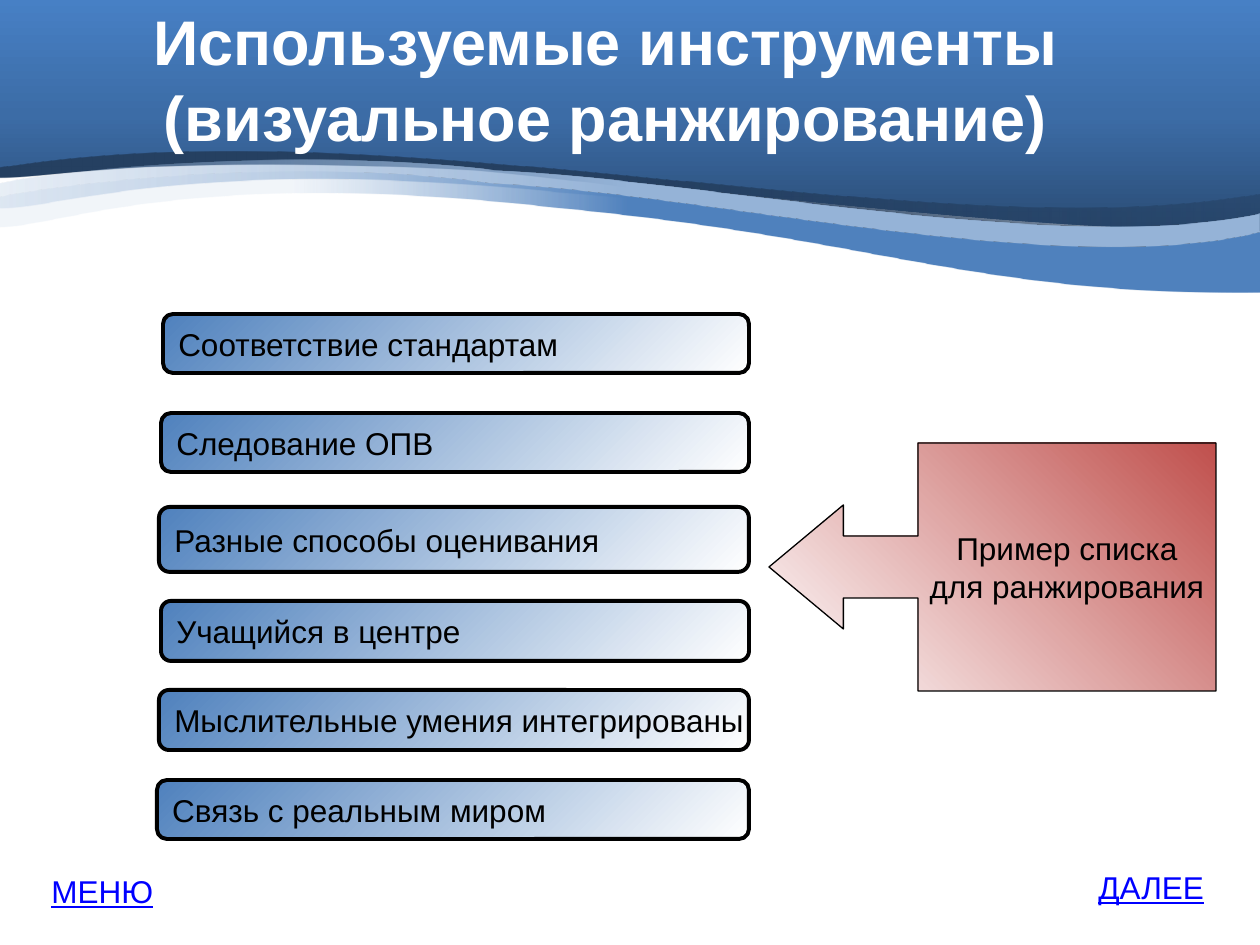
import dataclasses

import lxml.etree
import pptx
import pptx.dml.color
import pptx.enum.shapes
import pptx.enum.text
import pptx.oxml.ns
import pptx.util

SCALE = 914400 / 126
KINDS = pptx.enum.shapes.MSO_SHAPE
ALIGN = pptx.enum.text.PP_ALIGN
ANCHOR = pptx.enum.text.MSO_ANCHOR
FIT = pptx.enum.text.MSO_AUTO_SIZE


@dataclasses.dataclass(frozen=True)
class Theme:
    """Colours, gradient stops and type sizes of the slide."""
    font: str = "Arial"
    head: int = 36
    body: int = 18
    white: str = "FFFFFF"
    ink: str = "000000"
    link: str = "0000FF"
    sky: tuple = ((0, "2A4C75", 100), (50, "3C6CA6", 100), (100, "4780C5", 100))
    shade: tuple = ((0, "254061", 50), (50, "254061", 100), (100, "254061", 100))
    pale: tuple = ((0, "95B3D7", 100), (50, "95B3D7", 100), (100, "95B3D7", 21))
    blue: tuple = ((0, "4F81BD", 100), (50, "4F81BD", 100), (77, "95B3D7", 12))
    bar: tuple = ((0, "4F81BD", 100), (100, "FFFFFF", 100))
    red: tuple = ((0, "FFFFFF", 100), (100, "C0504D", 100))


THEME = Theme()

WAVES = (
    (THEME.sky, 270, ((-1, -1), (1260, -1), (1260, 231),
                      (839, 231, 363, 116, -1, 168), (-1, -1))),
    (THEME.shade, 180, ((1264, 193), (1264, 231),
                        (982, 268, 791, 198, 474, 171),
                        (152, 154, 59, 178, 0, 178), (0, 168),
                        (402, 105, 941, 253, 1264, 193))),
    (THEME.pale, 180, ((1260, 213), (1260, 266),
                       (975, 268, 873, 217, 557, 192),
                       (190, 155, 59, 209, 0, 208),
                       (0, 207, -1, 199, 0, 183),
                       (58, 171, 291, 145, 494, 170),
                       (703, 179, 1063, 256, 1260, 213))),
    (THEME.blue, 180, ((1260, 232), (1260, 292),
                       (975, 295, 873, 237, 557, 208),
                       (190, 166, 59, 227, 0, 227),
                       (0, 224, -1, 217, 0, 197),
                       (58, 185, 291, 155, 494, 184),
                       (703, 193, 1063, 281, 1260, 232))),
)

RIGHT = 749
BARS = (
    ("Соответствие стандартам", 163, 314, 59),
    ("Следование ОПВ", 161, 413, 59),
    ("Разные способы оценивания", 159, 507, 65),
    ("Учащийся в центре", 161, 601, 60),
    ("Мыслительные умения интегрированы", 159, 690, 60),
    ("Связь с реальным миром", 157, 780, 59),
)


def px(*nums):
    """Turn pixel lengths into EMU."""
    return [pptx.util.Emu(round(num * SCALE)) for num in nums]


def rgb(code):
    """Make a colour from its hex code."""
    return pptx.dml.color.RGBColor.from_string(code)


def blend(shape, stops, angle):
    """Fill a shape with a linear gradient at a clockwise angle."""
    shape.shadow.inherit = False
    shape.fill.gradient()
    shape.fill.gradient_angle = 360 - angle
    qn = pptx.oxml.ns.qn
    group = next(shape.element.iter(qn("a:gsLst")))
    for old in list(group):
        group.remove(old)
    for place, code, alpha in stops:
        stop = lxml.etree.SubElement(group, qn("a:gs"), pos=str(place * 1000))
        tint = lxml.etree.SubElement(stop, qn("a:srgbClr"), val=code)
        if alpha < 100:
            lxml.etree.SubElement(tint, qn("a:alpha"), val=str(alpha * 1000))


def write(shape, lines, size=THEME.body, color=THEME.ink, align=ALIGN.LEFT,
          anchor=ANCHOR.MIDDLE, wrap=False, bold=False, under=False):
    """Write one run per line into a shape."""
    frame = shape.text_frame
    frame.word_wrap = wrap
    frame.vertical_anchor = anchor
    for num, line in enumerate(lines):
        para = frame.add_paragraph() if num else frame.paragraphs[0]
        para.alignment = align
        run = para.add_run()
        run.text = line
        font = run.font
        font.name, font.size = THEME.font, pptx.util.Pt(size)
        font.bold, font.underline = bold, under
        font.color.rgb = rgb(color)


def bend(shape, route):
    """Turn the sides of a freeform that have control points into curves."""
    qn = pptx.oxml.ns.qn
    sides = list(shape.element.iter(qn("a:lnTo")))
    for side, part in zip(sides, route[1:]):
        if len(part) == 2:
            continue
        side.tag_name = None
    return sides


def add_wave(shapes, stops, angle, route):
    """Add one wave of the header."""
    qn = pptx.oxml.ns.qn
    ends = [px(*part[-2:]) for part in route]
    pen = shapes.build_freeform(*ends[0], scale=1.0)
    pen.add_line_segments(ends[1:], close=True)
    wave = pen.convert_to_shape()
    sides = list(wave.element.iter(qn("a:lnTo")))
    for side, part in zip(sides, route[1:]):
        if len(part) == 6:
            curve = lxml.etree.Element(qn("a:cubicBezTo"))
            for x, y in zip(px(*part[::2]), px(*part[1::2])):
                lxml.etree.SubElement(curve, qn("a:pt"), x=str(x - wave.left),
                                      y=str(y - wave.top))
            side.getparent().replace(side, curve)
    blend(wave, stops, angle)
    wave.line.fill.background()


def add_block(shapes, kind, box, stops, angle, width):
    """Add an outlined preset shape with a gradient."""
    block = shapes.add_shape(kind, *px(*box))
    blend(block, stops, angle)
    block.line.color.rgb = rgb(THEME.ink)
    block.line.width = pptx.util.Pt(width)
    return block


def add_text(shapes, box, text, **style):
    """Add a text box with one run of text."""
    label = shapes.add_textbox(*px(*box))
    write(label, [text], **style)
    return label


def main():
    """Build the slide and save it."""
    deck = pptx.Presentation()
    deck.slide_width, deck.slide_height = px(1260, 945)
    shapes = deck.slides.add_slide(deck.slide_layouts[6]).shapes
    for stops, angle, route in WAVES:
        add_wave(shapes, stops, angle, route)
    add_text(shapes, (0, 0, 1211, 157),
             "Используемые инструменты (визуальное ранжирование)",
             size=THEME.head, color=THEME.white, align=ALIGN.CENTER,
             wrap=True, bold=True)
    group = shapes.add_group_shape().shapes
    for text, left, top, height in BARS:
        bar = add_block(group, KINDS.ROUNDED_RECTANGLE,
                        (left, top, RIGHT - left, height), THEME.bar, 45, 2.25)
        write(bar, [text])
    arrow = add_block(shapes, KINDS.LEFT_ARROW_CALLOUT, (769, 443, 447, 248),
                      THEME.red, 315, 0.75)
    for num, value in enumerate((0.25, 0.25, 0.3, 2 / 3)):
        arrow.adjustments[num] = value
    write(arrow, ["Пример списка", "для ранжирования"], align=ALIGN.CENTER)
    for text, left, top in (("ДАЛЕЕ", 1086, 862), ("МЕНЮ", 39, 866)):
        label = add_text(shapes, (left, top, 139, 50), text, color=THEME.link,
                         anchor=ANCHOR.TOP, under=True)
        label.text_frame.auto_size = FIT.SHAPE_TO_FIT_TEXT
    deck.save("out.pptx")


if __name__ == "__main__":
    main()
